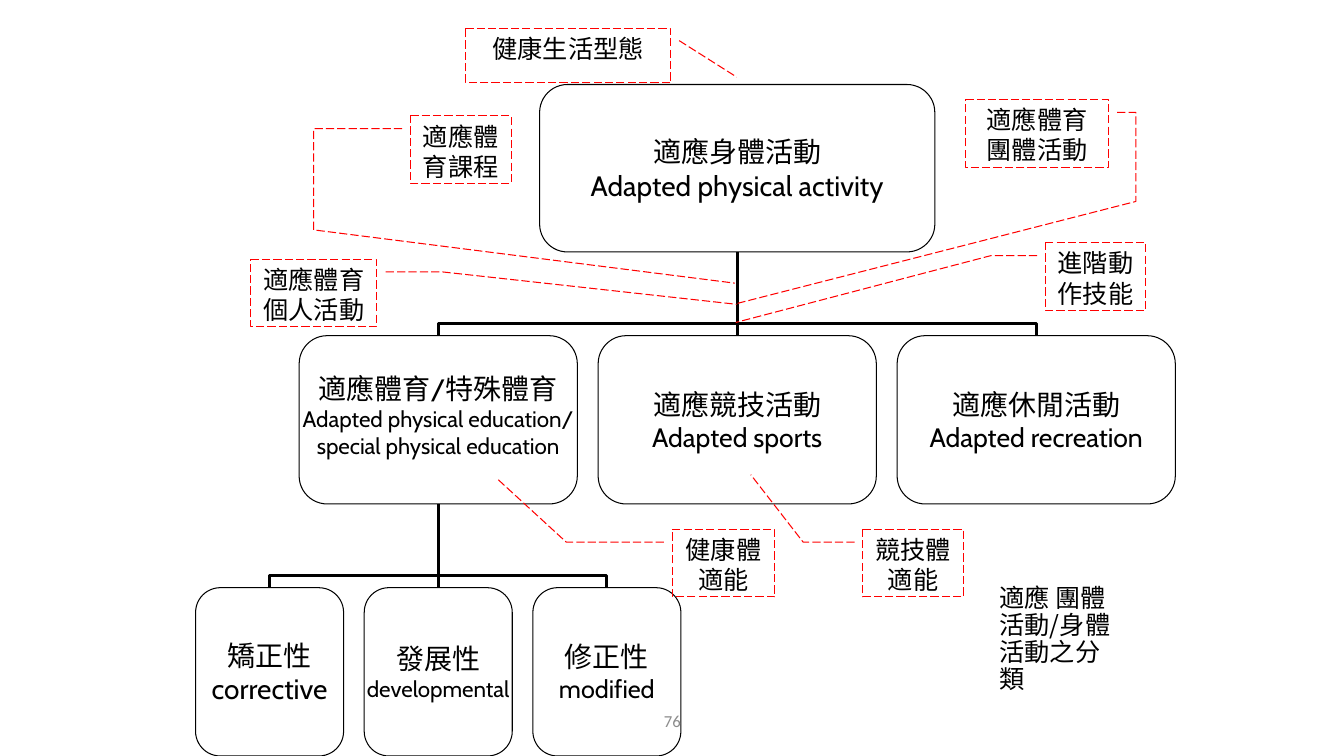
from dataclasses import dataclass

from lxml.etree import SubElement
from pptx import Presentation
from pptx.dml.color import RGBColor
from pptx.enum.dml import MSO_LINE
from pptx.enum.shapes import MSO_CONNECTOR, MSO_SHAPE
from pptx.enum.text import MSO_ANCHOR, PP_ALIGN
from pptx.oxml.ns import qn
from pptx.util import Cm, Pt


@dataclass(frozen=True)
class Theme:
    ink: RGBColor = RGBColor(0x00, 0x00, 0x00)
    paper: RGBColor = RGBColor(0xFF, 0xFF, 0xFF)
    accent: RGBColor = RGBColor(0xFF, 0x00, 0x00)
    muted: RGBColor = RGBColor(0x8C, 0x8C, 0x8C)
    node_font: str = "Cabin"
    callout_font: str = "Arial"
    number_font: str = "Calibri"
    cjk_font: str = "Noto Sans CJK SC"
    heading: int = 20
    subheading: int = 19
    body: int = 18
    small: int = 16
    number: int = 12
    thin: float = 0.75
    thick: float = 2.25


def write_line(paragraph, text, *, size, font, color, cjk_font,
               align=PP_ALIGN.CENTER, spacing=None):
    paragraph.alignment = align
    paragraph.line_spacing = spacing
    run = paragraph.add_run()
    run.text = text
    run.font.size = Pt(size)
    run.font.name = font
    run.font.color.rgb = color
    SubElement(run.font._element, qn("a:ea")).set("typeface", cjk_font)


class DiagramSlide:
    def __init__(self, slide, theme):
        self.shapes = slide.shapes
        self.theme = theme

    def node(self, left, top, width, height, lines, bottom_inset=0.05):
        theme = self.theme
        box = self.shapes.add_shape(MSO_SHAPE.ROUNDED_RECTANGLE,
                                    Cm(left), Cm(top), Cm(width), Cm(height))
        box.shadow.inherit = False
        box.fill.solid()
        box.fill.fore_color.rgb = theme.paper
        box.line.color.rgb = theme.ink
        box.line.width = Pt(theme.thin)
        frame = box.text_frame
        frame.word_wrap = False
        frame.vertical_anchor = MSO_ANCHOR.MIDDLE
        frame.margin_left = frame.margin_right = Cm(0.1)
        frame.margin_top, frame.margin_bottom = Cm(0.05), Cm(bottom_inset)
        for index, (text, size) in enumerate(lines):
            paragraph = frame.add_paragraph() if index else frame.paragraphs[0]
            write_line(paragraph, text, size=size, font=theme.node_font,
                       color=theme.ink, cjk_font=theme.cjk_font)
        return box

    def branch(self, parent, child, straight=False):
        kind = MSO_CONNECTOR.STRAIGHT if straight else MSO_CONNECTOR.ELBOW
        link = self.shapes.add_connector(kind, 0, 0, 0, 0)
        link.begin_connect(child, 0)
        link.end_connect(parent, 2)
        link.line.color.rgb = self.theme.ink
        link.line.width = Pt(self.theme.thick)
        properties = link._element.spPr
        SubElement(properties, qn("a:effectLst"))
        if straight:
            return
        rightward = link.begin_x > link.end_x
        run, rise = abs(link.begin_x - link.end_x), abs(link.begin_y - link.end_y)
        center_x = (link.begin_x + link.end_x) // 2
        center_y = (link.begin_y + link.end_y) // 2
        link.left, link.top = center_x - rise // 2, center_y - run // 2
        link.width, link.height = rise, run
        frame = properties.find(qn("a:xfrm"))
        frame.set("rot", "5400000" if rightward else "16200000")
        frame.set("flipH", "1" if rightward else "0")
        frame.set("flipV", "0")
        geometry = properties.find(qn("a:prstGeom"))
        guide = SubElement(geometry.find(qn("a:avLst")), qn("a:gd"))
        guide.set("name", "adj1")
        guide.set("fmla", "val 14900")

    def callout(self, kind, left, top, width, height, text, leader):
        theme = self.theme
        label = self.shapes.add_shape(kind, Cm(left), Cm(top), Cm(width), Cm(height))
        label.shadow.inherit = False
        label.fill.background()
        label.line.color.rgb = theme.accent
        label.line.width = Pt(theme.thin)
        label.line.dash_style = MSO_LINE.LONG_DASH
        for index, value in enumerate(leader):
            label.adjustments[index] = value
        label.text_frame.word_wrap = True
        label.text_frame.vertical_anchor = MSO_ANCHOR.TOP
        write_line(label.text_frame.paragraphs[0], text, size=theme.body,
                   font=theme.callout_font, color=theme.ink, cjk_font=theme.cjk_font)

    def caption(self, left, top, width, height, text, **style):
        frame = self.shapes.add_textbox(Cm(left), Cm(top), Cm(width), Cm(height)).text_frame
        frame.word_wrap = True
        frame.vertical_anchor = MSO_ANCHOR.MIDDLE
        write_line(frame.paragraphs[0], text, cjk_font=self.theme.cjk_font, **style)


def main():
    deck = Presentation()
    deck.slide_width, deck.slide_height = Cm(33.87), Cm(19.05)
    theme = Theme()
    diagram = DiagramSlide(deck.slides.add_slide(deck.slide_layouts[6]), theme)

    activity = diagram.node(13.6, 2.13, 9.96, 4.22, [
        ("適應身體活動", theme.heading), ("Adapted physical activity", theme.heading)])
    fields = [
        ([("適應體育/特殊體育", theme.heading),
          ("Adapted physical education/", theme.small),
          ("special physical education", theme.small)], 0.3),
        ([("適應競技活動", theme.heading), ("Adapted sports", theme.subheading)], 0.05),
        ([("適應休閒活動", theme.heading), ("Adapted recreation", theme.subheading)], 0.05),
    ]
    field_nodes = [diagram.node(7.54 + 7.535 * column, 8.46, 7.01, 4.24, lines, inset)
                   for column, (lines, inset) in enumerate(fields)]
    programs = [
        [("矯正性", theme.heading), ("corrective", theme.heading)],
        [("發展性", theme.heading), ("developmental", theme.small)],
        [("修正性", theme.heading), ("modified", theme.body)],
    ]
    program_nodes = [diagram.node(4.93 + 4.25 * column, 14.81, 3.73, 4.24, lines)
                     for column, lines in enumerate(programs)]
    for parent, children in ((activity, field_nodes), (field_nodes[0], program_nodes)):
        for column, child in enumerate(children):
            diagram.branch(parent, child, straight=column == 1)

    one_part, two_part, three_part = (
        MSO_SHAPE.LINE_CALLOUT_1, MSO_SHAPE.LINE_CALLOUT_2, MSO_SHAPE.LINE_CALLOUT_3)
    for callout in (
        (three_part, 10.34, 2.92, 2.54, 1.7, "適應體育課程",
         (0.19, -0.08, 0.19, -0.96, 1.69, -0.96, 2.48, 3.22)),
        (three_part, 24.33, 2.51, 3.61, 1.7, "適應體育團體活動",
         (0.19, 1.06, 0.19, 1.19, 1.51, 1.19, 3.02, -1.59)),
        (two_part, 6.32, 6.53, 3.18, 1.7, "適應體育個人活動",
         (0.19, 1.07, 0.19, 1.52, 0.67, 3.85)),
        (two_part, 16.94, 13.34, 2.59, 1.7, "健康體適能",
         (0.19, -0.08, 0.19, -1.03, -0.76, -1.71)),
        (two_part, 21.74, 13.34, 2.54, 1.7, "競技體適能",
         (0.19, -0.08, 0.19, -0.59, -0.81, -1.11)),
        (two_part, 26.34, 6.12, 2.54, 1.7, "進階動作技能",
         (0.19, -0.08, 0.19, -0.54, 1.18, -3.07)),
        (one_part, 11.73, 0.71, 5.18, 1.37, "健康生活型態",
         (0.23, 1.04, 0.9, 1.32)),
    ):
        diagram.callout(*callout)

    diagram.caption(24.94, 14.53, 3.51, 3.18, "適應 團體活動/身體活動之分類",
                    size=theme.body, font=theme.cjk_font, color=theme.ink,
                    align=PP_ALIGN.LEFT, spacing=0.9)
    diagram.caption(11.23, 17.65, 11.43, 1.02, "76", size=theme.number,
                    font=theme.number_font, color=theme.muted)
    deck.save("out.pptx")


if __name__ == "__main__":
    main()
